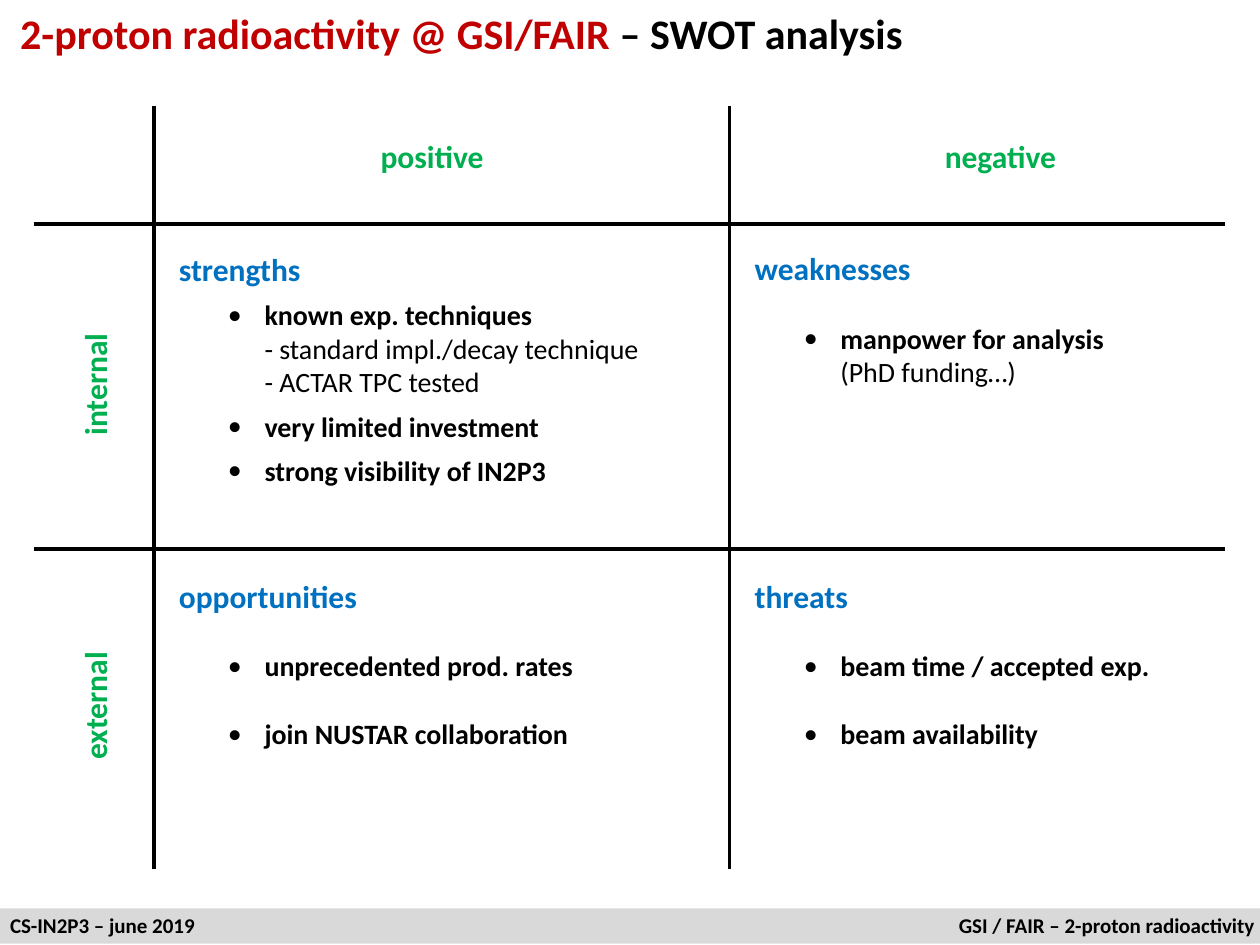
"""Build the SWOT analysis slide for 2-proton radioactivity at GSI/FAIR."""
from dataclasses import dataclass

from lxml.etree import SubElement
from pptx import Presentation
from pptx.dml.color import RGBColor as RGB
from pptx.enum.shapes import MSO_CONNECTOR as Connector, MSO_SHAPE as Preset
from pptx.enum.text import MSO_ANCHOR as Anchor, MSO_AUTO_SIZE as AutoSize, PP_ALIGN as Align
from pptx.oxml.ns import qn
from pptx.util import Inches, Pt


@dataclass(frozen=True)
class Theme:
    font: str = "Calibri"
    black: str = "000000"
    title: str = "C00000"
    axis: str = "00B050"
    heading: str = "0070C0"
    bar: str = "D9D9D9"
    title_size: int = 24
    heading_size: int = 18
    body_size: int = 16
    footer_size: int = 12
    line_width: float = 2.25
    inset: float = 0.04
    text_indent: float = 0.68
    bullet_indent: float = -0.29


def apply(target, values):
    for name, value in values.items():
        setattr(target, name, value)


class SlideBuilder:
    def __init__(self, presentation, theme):
        self.theme = theme
        self.slide = presentation.slides.add_slide(presentation.slide_layouts[5])

    def frame(self, shape, wrap=False):
        inset = Inches(self.theme.inset)
        apply(shape.text_frame, dict(
            margin_left=inset, margin_right=inset, margin_top=inset, margin_bottom=inset,
            vertical_anchor=Anchor.TOP, word_wrap=wrap, auto_size=AutoSize.SHAPE_TO_FIT_TEXT))
        return shape.text_frame

    def run(self, paragraph, text, size, color, bold=True):
        run = paragraph.add_run()
        run.text = text
        apply(run.font, dict(name=self.theme.font, size=Pt(size), bold=bold))
        run.font.color.rgb = RGB.from_string(color)

    def title(self, box, parts):
        shape = self.slide.shapes.title
        apply(shape, dict(zip(("left", "top", "width", "height"), map(Inches, box))))
        paragraph = self.frame(shape).paragraphs[0]
        paragraph.alignment = Align.LEFT
        for text, color in parts:
            self.run(paragraph, text, self.theme.title_size, color)

    def label(self, box, text, size, color, align=Align.CENTER, rotation=0):
        shape = self.slide.shapes.add_textbox(*map(Inches, box))
        shape.rotation = rotation
        paragraph = self.frame(shape).paragraphs[0]
        paragraph.alignment = align
        self.run(paragraph, text, size, color)

    def axis_label(self, center_x, center_y, text, rotation=0):
        width, height = 1.1, 0.38
        box = (center_x - width / 2, center_y - height / 2, width, height)
        self.label(box, text, self.theme.heading_size, self.theme.axis, rotation=rotation)

    def bar(self, box):
        shape = self.slide.shapes.add_shape(Preset.RECTANGLE, *map(Inches, box))
        shape.shadow.inherit = False
        shape.fill.solid()
        shape.fill.fore_color.rgb = RGB.from_string(self.theme.bar)
        shape.line.fill.background()

    def line(self, *ends):
        connector = self.slide.shapes.add_connector(Connector.STRAIGHT, *map(Inches, ends))
        connector.line.width = Pt(self.theme.line_width)
        connector.line.color.rgb = RGB.from_string(self.theme.black)
        SubElement(connector._element.spPr, qn("a:effectLst"))

    def item(self, frame, text, gap, bullet):
        paragraph = frame.add_paragraph()
        properties = paragraph._p.get_or_add_pPr()
        properties.set("marL", str(Inches(self.theme.text_indent)))
        properties.set("indent", str(Inches(self.theme.bullet_indent) if bullet else 0))
        paragraph.space_before = Pt(gap)
        if bullet:
            SubElement(properties, qn("a:buFont"), typeface=self.theme.font)
            SubElement(properties, qn("a:buChar"), char="•")
        else:
            SubElement(properties, qn("a:buNone"))
        self.run(paragraph, text, self.theme.body_size, self.theme.black, bullet)

    def quadrant(self, box, heading, gap, items):
        frame = self.frame(self.slide.shapes.add_textbox(*map(Inches, box)), wrap=True)
        self.run(frame.paragraphs[0], heading, self.theme.heading_size, self.theme.heading)
        for text, *details in items:
            self.item(frame, text, gap, True)
            for detail in details:
                self.item(frame, detail, 0, False)


def main():
    presentation = Presentation()
    apply(presentation, dict(slide_width=Inches(10), slide_height=Inches(7.5)))
    theme = Theme()
    builder = SlideBuilder(presentation, theme)

    builder.bar((0, 7.21, 10, 0.28))
    builder.title((0.12, 0.02, 7.15, 0.48), [
        ("2-proton radioactivity @ GSI/FAIR ", theme.title),
        ("– SWOT analysis", theme.black)])
    for box, text, align in [
            ((0.04, 7.2, 1.57, 0.28), "CS-IN2P3 – june 2019", Align.LEFT),
            ((7.54, 7.2, 2.46, 0.28), "GSI / FAIR – 2-proton radioactivity", Align.RIGHT)]:
        builder.label(box, text, theme.footer_size, theme.black, align)

    for x in (1.22, 5.79):
        builder.line(x, 0.84, x, 6.9)
    for y in (1.78, 4.36):
        builder.line(0.27, y, 9.72, y)

    for x, text in ((3.43, "positive"), (7.94, "negative")):
        builder.axis_label(x, 1.24, text)
    for y, text in ((3.05, "internal"), (5.6, "external")):
        builder.axis_label(0.75, y, text, rotation=270)

    left, right, upper, lower = 1.38, 5.95, 1.94, 4.54
    small_gap, line_gap = 6, 19.5
    builder.quadrant((left, upper, 3.9, 1.98), "strengths", small_gap, [
        ("known exp. techniques", "- standard impl./decay technique", "- ACTAR TPC tested"),
        ("very limited investment",),
        ("strong visibility of IN2P3",)])
    builder.quadrant((right, upper, 3.9, 1.46), "weaknesses", line_gap, [
        ("manpower for analysis", "(PhD funding…)")])
    builder.quadrant((left, lower, 3.9, 1.73), "opportunities", line_gap, [
        ("unprecedented prod. rates",), ("join NUSTAR collaboration",)])
    builder.quadrant((right, lower, 3.9, 1.73), "threats", line_gap, [
        ("beam time / accepted exp.",), ("beam availability",)])

    presentation.save("out.pptx")


if __name__ == "__main__":
    main()
